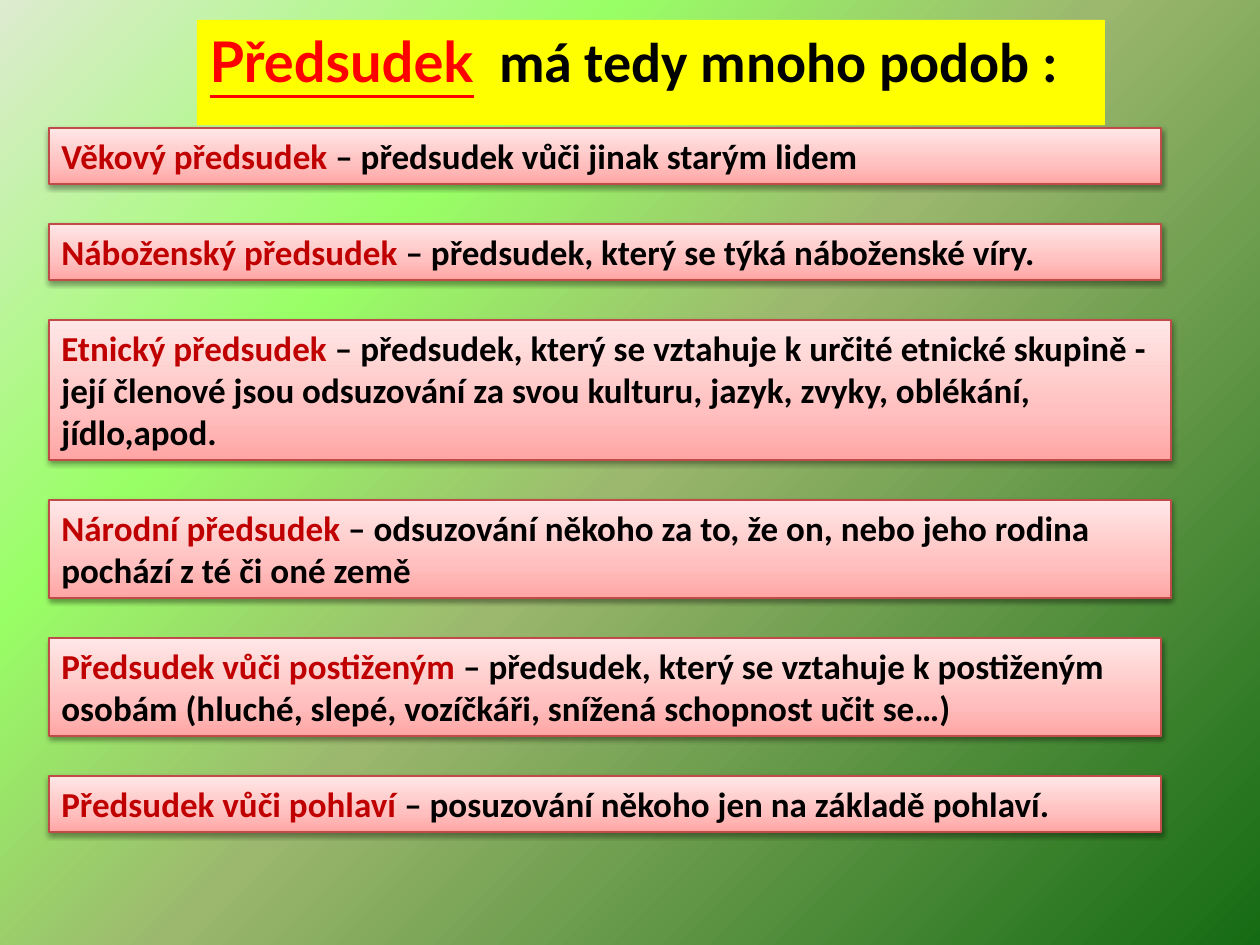
from lxml import etree
from pptx import Presentation
from pptx.dml.color import RGBColor
from pptx.enum.shapes import MSO_SHAPE
from pptx.enum.text import MSO_ANCHOR, MSO_AUTO_SIZE, PP_ALIGN
from pptx.oxml.ns import qn
from pptx.util import Pt

RECTANGLE = MSO_SHAPE.RECTANGLE
TOP = MSO_ANCHOR.TOP
GROW = MSO_AUTO_SIZE.SHAPE_TO_FIT_TEXT
LEFT = PP_ALIGN.LEFT

PX = 914400 // 126
BLACK, RED, DARK_RED = "000000", "FF0000", "C00000"
BACKDROP = [(0, "DDEBCF"), (28, "99FF66"), (50, "9CB86E"), (100, "156B13")]
PINK = [(0, "FFA6A5"), (35, "FFC0BF"), (100, "FFE7E7")]

HEADING = [
    ("Předsudek", RED, "Lato", True),
    ("  ", RED, "Calibri", False),
    ("má tedy mnoho podob :", BLACK, "Calibri", False),
]
NARROW, WIDE = 1112, 1122
PREJUDICES = [
    ("Věkový předsudek ", "– předsudek vůči jinak starým lidem", NARROW, 1),
    ("Náboženský předsudek ", "– předsudek, který se týká náboženské víry.", NARROW, 1),
    ("Etnický předsudek ",
     "– předsudek, který se vztahuje k určité etnické skupině - její členové jsou "
     "odsuzování za svou kulturu, jazyk, zvyky, oblékání, jídlo,apod.", WIDE, 3),
    ("Národní předsudek ",
     "– odsuzování někoho za to, že on, nebo jeho rodina pochází z té či oné země", WIDE, 2),
    ("Předsudek vůči postiženým ",
     "– předsudek, který se vztahuje k postiženým osobám (hluché, slepé, vozíčkáři, "
     "snížená schopnost učit se…)", NARROW, 2),
    ("Předsudek vůči pohlaví ", "– posuzování někoho jen na základě pohlaví.", NARROW, 1),
]
BOX_LEFT, FIRST_TOP, GAP = 49, 128, 40
LINE_HEIGHT, PADDING = 42, 14


def color(value):
    return RGBColor.from_string(value)


def px(*lengths):
    return [length * PX for length in lengths]


def set_gradient(fill, properties, stops, angle):
    fill.gradient()
    fill.gradient_angle = angle
    stop_list = properties.find(qn("a:gradFill")).find(qn("a:gsLst"))
    for old_stop in list(stop_list):
        stop_list.remove(old_stop)
    for position, value in stops:
        stop = etree.SubElement(stop_list, qn("a:gs"), pos=str(position * 1000))
        etree.SubElement(stop, qn("a:srgbClr"), val=value)


def add_soft_shadow(shape):
    shape.shadow.inherit = False
    effects = shape.element.spPr.find(qn("a:effectLst"))
    shadow = etree.SubElement(effects, qn("a:outerShdw"), blurRad="40000",
                              dist="20000", dir="5400000", rotWithShape="0")
    tint = etree.SubElement(shadow, qn("a:srgbClr"), val=BLACK)
    etree.SubElement(tint, qn("a:alpha"), val="38000")


def write(shape, runs, size, wrap):
    frame = shape.text_frame
    frame.word_wrap = wrap
    frame.auto_size = GROW
    frame.vertical_anchor = TOP
    paragraph = frame.paragraphs[0]
    paragraph.alignment = LEFT
    for text, value, font_name, underline in runs:
        run = paragraph.add_run()
        run.text = text
        run.font.name = font_name
        run.font.size = Pt(size)
        run.font.bold = True
        run.font.underline = underline
        run.font.color.rgb = color(value)


def add_prejudice(slide, term, meaning, top, width, height):
    box = slide.shapes.add_shape(RECTANGLE, *px(BOX_LEFT, top, width, height))
    set_gradient(box.fill, box.element.spPr, PINK, 90)
    box.line.color.rgb = color("BF4C48")
    box.line.width = Pt(0.75)
    add_soft_shadow(box)
    write(box, [(term, DARK_RED, "Calibri", False),
                (meaning, BLACK, "Calibri", False)], 20, True)


def main():
    deck = Presentation()
    deck.slide_width, deck.slide_height = px(1260, 945)
    slide = deck.slides.add_slide(deck.slide_layouts[5])
    backdrop = slide.background.fill
    backdrop.solid()
    set_gradient(backdrop, slide.element.find(".//" + qn("p:bgPr")), BACKDROP, 315)

    heading = slide.shapes.title
    heading.left, heading.top, heading.width, heading.height = px(197, 20, 908, 80)
    heading.fill.solid()
    heading.fill.fore_color.rgb = color("FFFF00")
    write(heading, HEADING, 32, False)

    top = FIRST_TOP
    for term, meaning, width, lines in PREJUDICES:
        height = PADDING + LINE_HEIGHT * lines
        add_prejudice(slide, term, meaning, top, width, height)
        top += height + GAP

    deck.save("out.pptx")


if __name__ == "__main__":
    main()
